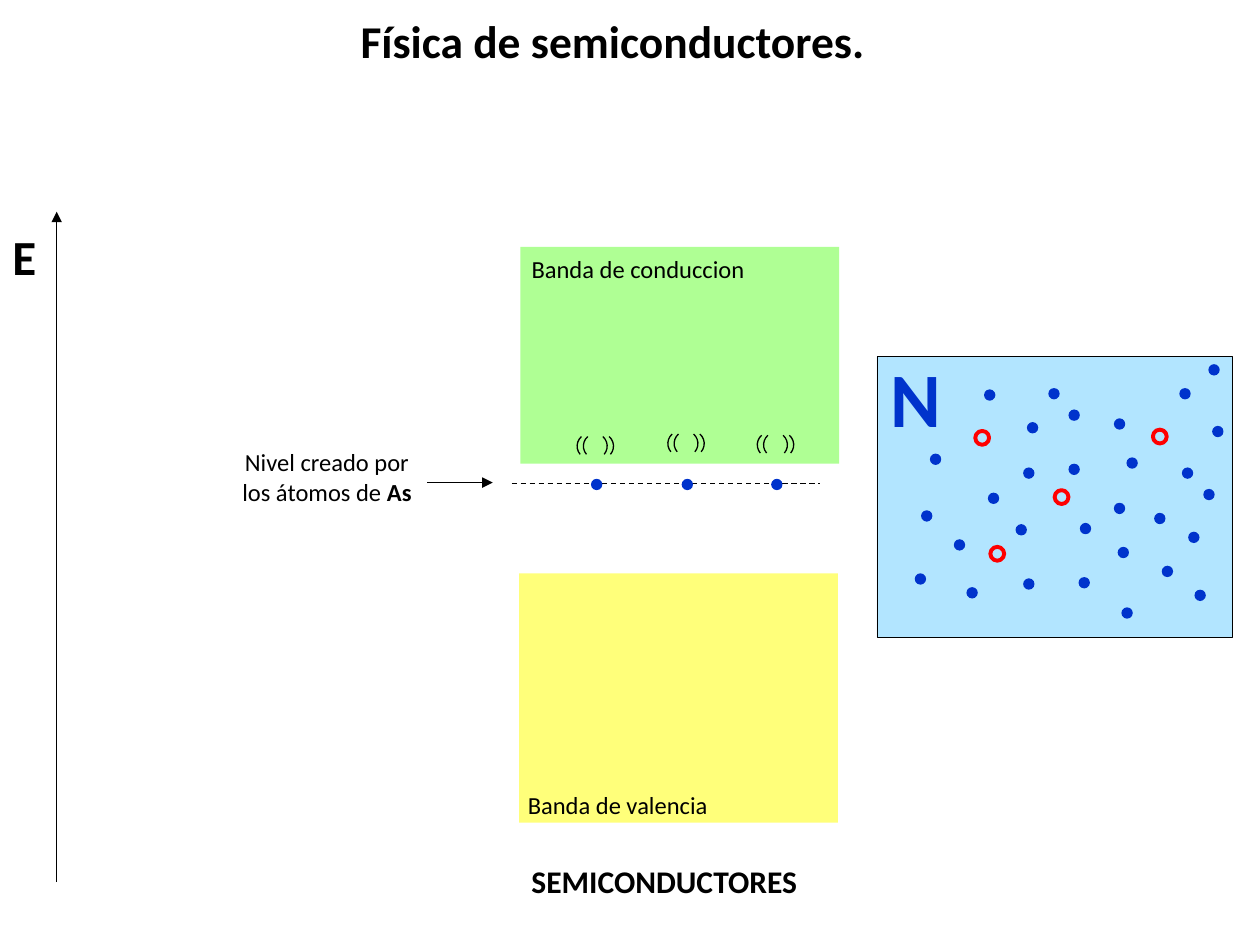
import pptx
import pptx.dml.color
import pptx.enum.dml
import pptx.enum.shapes
import pptx.enum.text
import pptx.oxml.ns
import pptx.util
from lxml import etree

Inches = pptx.util.Inches
RGBColor = pptx.dml.color.RGBColor
SHAPE = pptx.enum.shapes.MSO_SHAPE
ALIGN = pptx.enum.text.PP_ALIGN
qn = pptx.oxml.ns.qn

BLACK = RGBColor(0x00, 0x00, 0x00)
BLUE = RGBColor(0x00, 0x33, 0xCC)
RED = RGBColor(0xFF, 0x00, 0x00)
YELLOW = RGBColor(0xFF, 0xFF, 0x00)
GREEN = RGBColor(0x66, 0xFF, 0x33)
SKY = RGBColor(0x66, 0xCC, 0xFF)

DOT, RING, ARC = 0.09, 0.11, 0.2
ELECTRONS = [
    (1.19, 0.52), (0.88, 1.08), (1.61, 1.32), (1.16, 1.76), (2.2, 1.24),
    (0.42, 0.77), (1.98, 0.8), (2.52, 1.85), (1.94, 1.99), (1.88, 0.49),
    (1.1, 1.33), (2.42, 0.88), (1.6, 1.75), (0.61, 1.45), (2.4, 0.25),
    (0.85, 0.26), (1.52, 0.85), (0.35, 1.22), (1.88, 1.16), (1.91, 1.51),
    (2.47, 1.39), (2.26, 1.66), (0.71, 1.83), (2.63, 0.06), (2.66, 0.55),
    (1.36, 0.25), (1.16, 0.88), (1.52, 0.42), (0.3, 1.72), (2.59, 1.05),
]
HOLES = [(0.78, 0.59), (0.9, 1.51), (1.41, 1.06), (2.19, 0.58)]
VIBRATIONS = [(0.52, -0.4), (1.24, -0.42), (1.95, -0.41)]


def write(tf, text, size=14, color=BLACK, bold=False, align=ALIGN.LEFT, bold_tail=""):
    """Fill a text frame, one paragraph a line, with an optional bold ending."""
    tf.word_wrap = False
    tf.vertical_anchor = pptx.enum.text.MSO_ANCHOR.TOP
    tf.auto_size = pptx.enum.text.MSO_AUTO_SIZE.SHAPE_TO_FIT_TEXT
    tf.text = text
    if bold_tail:
        tf.paragraphs[-1].add_run().text = bold_tail
    for p in tf.paragraphs:
        p.alignment = align
        for r in p.runs:
            r.font.name = "Calibri"
            r.font.size = pptx.util.Pt(size)
            r.font.color.rgb = color
            r.font.bold = bold
    if bold_tail:
        tf.paragraphs[-1].runs[-1].font.bold = True


def add_text(s, box, text, **fmt):
    """Add a text box."""
    sp = s.shapes.add_textbox(*map(Inches, box))
    write(sp.text_frame, text, **fmt)


def add_shape(s, kind, box, fill=None, opacity=100, line=None, width=0.75):
    """Add a preset shape with an optional fill and outline."""
    sp = s.shapes.add_shape(kind, *map(Inches, box))
    sp.shadow.inherit = False
    if fill is None:
        sp.fill.background()
    else:
        sp.fill.solid()
        sp.fill.fore_color.rgb = fill
        if opacity < 100:
            clr = sp.fill._xPr.find(qn("a:solidFill"))[0]
            etree.SubElement(clr, qn("a:alpha"), val=str(opacity * 1000))
    if line is None:
        sp.line.fill.background()
    else:
        sp.line.color.rgb = line
        sp.line.width = pptx.util.Pt(width)
    return sp


def add_line(s, x1, y1, x2, y2, arrow=False, dashed=False):
    """Add a thin black line, optionally dashed or with an arrowhead."""
    cx = s.shapes.add_connector(
        pptx.enum.shapes.MSO_CONNECTOR.STRAIGHT, *map(Inches, (x1, y1, x2, y2)))
    cx.line.color.rgb = BLACK
    cx.line.width = pptx.util.Pt(0.75)
    if dashed:
        cx.line.dash_style = pptx.enum.dml.MSO_LINE.DASH
    if arrow:
        etree.SubElement(cx.line._get_or_add_ln(), qn("a:tailEnd"), type="triangle")
    etree.SubElement(cx._element.spPr, qn("a:effectLst"))


def add_vibration(s, x, y):
    """Draw a pair of arcs on each side of a point."""
    for dx, rotation, flip in ((0.05, 229.2, False), (0, 229.2, False),
                               (0.04, 130.8, True), (0.09, 130.8, True)):
        sp = add_shape(s, SHAPE.ARC, (x + dx, y, ARC, ARC), line=BLACK)
        sp.rotation = rotation
        if flip:
            sp._element.spPr.find(qn("a:xfrm")).set("flipH", "1")


def place_title(s, box):
    """Move and format the title placeholder."""
    sp = s.shapes.title
    sp.left, sp.top, sp.width, sp.height = map(Inches, box)
    write(sp.text_frame, "Física de semiconductores.", size=26, bold=True,
          align=ALIGN.CENTER)


def energy_axis(s, box):
    """Draw the vertical energy axis at the right edge of the box."""
    x, y, w, h = box
    add_line(s, x + w, y + h, x + w, y, arrow=True)
    add_text(s, (x, y + 0.07, 0.39, 0.57), "E", size=28, bold=True)


def energy_bands(s, box):
    """Draw the conduction and valence bands with their labels."""
    x, y, w, h = box
    add_shape(s, SHAPE.RECTANGLE, (x, y + 2.59, w, 1.98), YELLOW, 52)
    add_shape(s, SHAPE.RECTANGLE, (x + 0.01, y, w, 1.72), GREEN, 52)
    add_text(s, (x, y + 0.01, 1.91, 0.34), "Banda de conduccion")
    add_text(s, (x - 0.03, y + 4.26, 1.65, 0.34), "Banda de valencia")
    add_text(s, (x, y + h - 0.4, 2.33, 0.4), "SEMICONDUCTORES", size=18, bold=True)


def donor_level(s, box):
    """Draw the dashed donor level, its vibrating electrons and its label."""
    x, y, w, h = box
    add_line(s, x - 0.67, y - 0.01, x - 0.15, y - 0.01, arrow=True)
    add_line(s, x, y, x + w, y + h, dashed=True)
    for dx, dy in VIBRATIONS:
        add_shape(s, SHAPE.OVAL, (x + dx + 0.11, y - 0.04, DOT, DOT), BLUE)
        add_vibration(s, x + dx, y + dy)
    add_text(s, (x - 2.24, y - 0.34, 1.55, 0.57),
             "Nivel creado por\nlos átomos de ", align=ALIGN.CENTER, bold_tail="As")


def n_crystal(s, box):
    """Draw the N-type crystal with free electrons and holes."""
    x, y, w, h = box
    add_shape(s, SHAPE.RECTANGLE, box, SKY, 50, line=BLACK, width=0.25)
    add_text(s, (x + 0.01, y - 0.1, 0.61, 0.84), "N", size=44, color=BLUE, bold=True)
    for dx, dy in ELECTRONS:
        add_shape(s, SHAPE.OVAL, (x + dx, y + dy, DOT, DOT), BLUE)
    for dx, dy in HOLES:
        add_shape(s, SHAPE.OVAL, (x + dx, y + dy, RING, RING), line=RED, width=2.25)


def main():
    """Build and save the slide."""
    prs = pptx.Presentation()
    prs.slide_width, prs.slide_height = Inches(10), Inches(7.5)
    s = prs.slides.add_slide(prs.slide_layouts[5])
    place_title(s, (2.74, 0.05, 4.25, 0.54))
    energy_axis(s, (0, 1.68, 0.45, 5.32))
    energy_bands(s, (4.12, 1.96, 2.53, 5.23))
    donor_level(s, (4.06, 3.84, 2.45, 0))
    n_crystal(s, (6.96, 2.83, 2.82, 2.23))
    prs.save("out.pptx")


if __name__ == "__main__":
    main()
